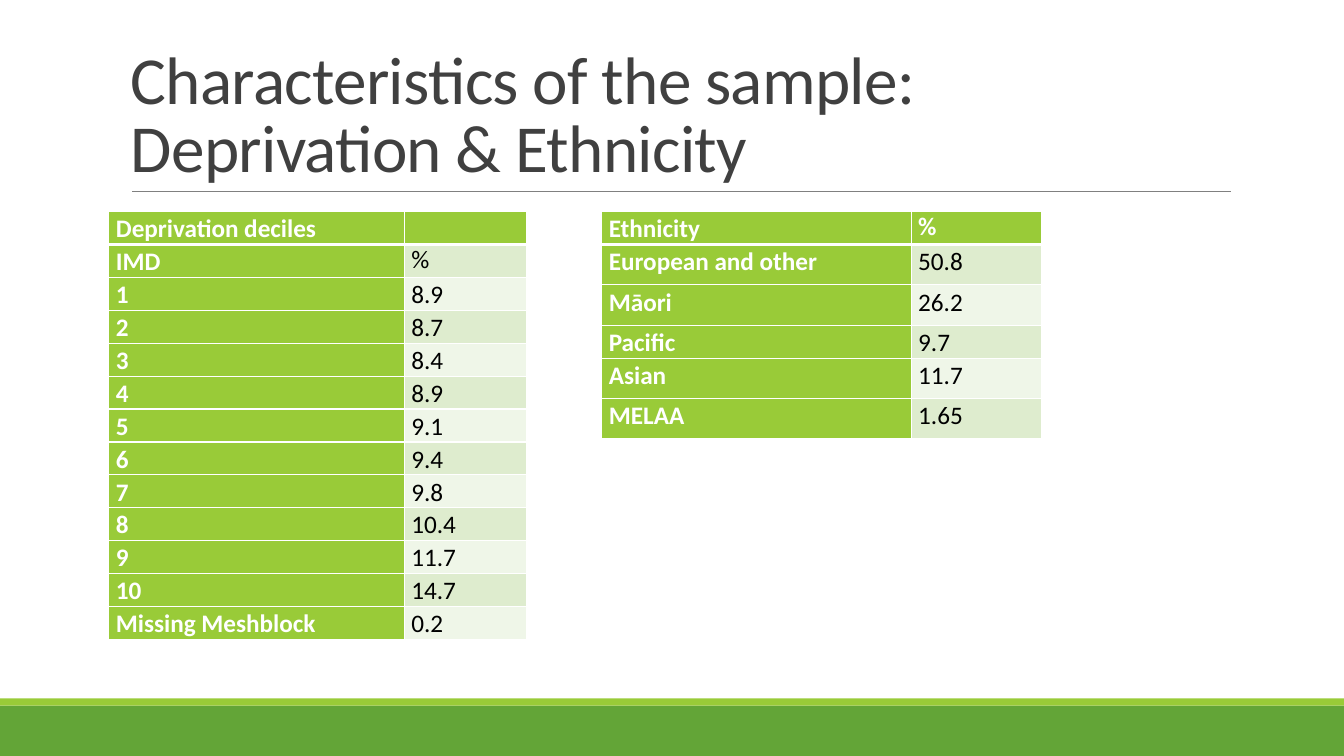
from lxml import etree
from pptx import Presentation
from pptx.dml.color import RGBColor
from pptx.enum.shapes import MSO_CONNECTOR, MSO_SHAPE
from pptx.enum.text import MSO_ANCHOR
from pptx.oxml.ns import qn
from pptx.util import Pt

RECT = MSO_SHAPE.RECTANGLE
STRAIGHT = MSO_CONNECTOR.STRAIGHT
BOTTOM = MSO_ANCHOR.BOTTOM

FONT = "Calibri"
WHITE, BLACK, GREY, RULE = "FFFFFF", "000000", "404040", "808080"
LIME, GREEN = "99CB38", "63A537"
BANDS = ["DEECCE", "EFF6E8"]

WIDTH, HEIGHT = 960, 540
TITLE = "Characteristics of the sample: Deprivation & Ethnicity"
BARS = [(504, 36, GREEN), (498.96, 5.04, LIME)]

DEPRIVATION = [
    ("Deprivation deciles", ""),
    ("IMD", "%"),
    ("1", "8.9"),
    ("2", "8.7"),
    ("3", "8.4"),
    ("4", "8.9"),
    ("5", "9.1"),
    ("6", "9.4"),
    ("7", "9.8"),
    ("8", "10.4"),
    ("9", "11.7"),
    ("10", "14.7"),
    ("Missing Meshblock", "0.2"),
]
ETHNICITY = [
    ("Ethnicity", "%"),
    ("European and other", "50.8"),
    ("Māori", "26.2"),
    ("Pacific", "9.7"),
    ("Asian", "11.7"),
    ("MELAA", "1.65"),
]
TABLE_TOP = 151.2
TABLES = [
    (77.76, [211, 87.5], [23.5] * len(DEPRIVATION), DEPRIVATION),
    (429.84, [221, 93.5], [23.5, 28.8, 28.8, 23.5, 28.8, 28.8], ETHNICITY),
]


def rgb(color):
    """Turn a hex string into a colour."""
    return RGBColor.from_string(color)


def set_font(p, size, color, bold=False):
    """Set the font of a whole paragraph."""
    p.font.name = FONT
    p.font.size = Pt(size)
    p.font.bold = bold
    p.font.color.rgb = rgb(color)


def add_bar(s, top, height, color):
    """Draw a full-width bar."""
    sp = s.shapes.add_shape(RECT, 0, Pt(top), Pt(WIDTH), Pt(height))
    sp.shadow.inherit = False
    sp.fill.solid()
    sp.fill.fore_color.rgb = rgb(color)
    sp.line.fill.background()


def add_rule(s):
    """Draw the thin line under the title."""
    line = s.shapes.add_connector(STRAIGHT, Pt(94.32), Pt(136.8), Pt(879.12), Pt(136.8))
    line.line.color.rgb = rgb(RULE)
    line.line.width = Pt(0.5)
    etree.SubElement(line._element.spPr, qn("a:effectLst"))


def add_title(s):
    """Write the slide title."""
    sp = s.shapes.add_textbox(Pt(86.4), Pt(22.32), Pt(792), Pt(114.48))
    tf = sp.text_frame
    tf.word_wrap = True
    tf.vertical_anchor = BOTTOM
    p = tf.paragraphs[0]
    p.line_spacing = 0.85
    r = p.add_run()
    r.text = TITLE
    set_font(p, 48, GREY)
    r.font._element.set("spc", "-50")


def set_borders(cell, top, bottom):
    """Give a cell white borders of the given top and bottom widths."""
    tcPr = cell._tc.get_or_add_tcPr()
    for side, width in (("L", 1), ("R", 1), ("T", top), ("B", bottom)):
        ln = etree.SubElement(tcPr, qn(f"a:ln{side}"), w=str(Pt(width)))
        fill = etree.SubElement(ln, qn("a:solidFill"))
        etree.SubElement(fill, qn("a:srgbClr"), val=WHITE)


def fill_cell(cell, text, row, col):
    """Write and style one table cell."""
    strong = row == 0 or col == 0
    set_borders(cell, 3 if row == 1 else 1, 3 if row == 0 else 1)
    cell.fill.solid()
    cell.fill.fore_color.rgb = rgb(LIME if strong else BANDS[(row - 1) % 2])
    cell.margin_left = cell.margin_right = Pt(5.04)
    cell.margin_top = cell.margin_bottom = 0
    p = cell.text_frame.paragraphs[0]
    if text:
        p.text = text
    p.line_spacing = 1.0 if text in ("", "%") else 1.07
    set_font(p, 18, WHITE if strong else BLACK, strong)


def add_data_table(s, left, widths, heights, rows):
    """Build a two-column table."""
    table = s.shapes.add_table(
        len(rows), len(widths), Pt(left), Pt(TABLE_TOP), Pt(sum(widths)), Pt(sum(heights))
    ).table
    for column, width in zip(table.columns, widths):
        column.width = Pt(width)
    for i, (height, values) in enumerate(zip(heights, rows)):
        table.rows[i].height = Pt(height)
        for j, text in enumerate(values):
            fill_cell(table.cell(i, j), text, i, j)


def main():
    """Build the slide and save it."""
    prs = Presentation()
    prs.slide_width, prs.slide_height = Pt(WIDTH), Pt(HEIGHT)
    s = prs.slides.add_slide(prs.slide_layouts[6])
    for bar in BARS:
        add_bar(s, *bar)
    add_rule(s)
    add_title(s)
    for table in TABLES:
        add_data_table(s, *table)
    prs.save("out.pptx")


if __name__ == "__main__":
    main()
